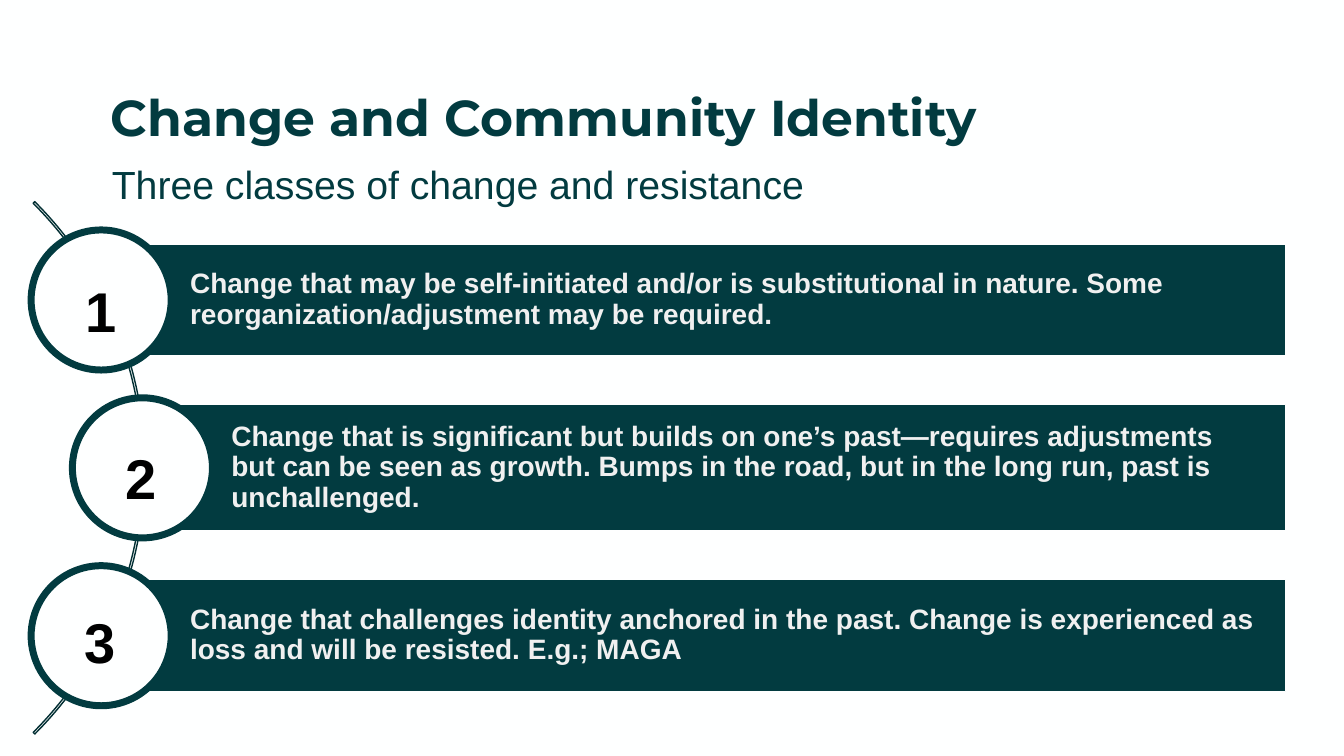
import pptx
import pptx.util
import pptx.dml.color
import pptx.enum.shapes
import pptx.enum.text

Cm = pptx.util.Cm
Pt = pptx.util.Pt
SHAPE = pptx.enum.shapes.MSO_SHAPE
ALIGN = pptx.enum.text.PP_ALIGN
ANCHOR = pptx.enum.text.MSO_ANCHOR

COLORS = {"paper": "FEFFFF", "teal": "023B40", "arc": "022F33",
          "bar_text": "F0F0F0", "number": "000000"}
TITLE = "Change and Community Identity"
SUBTITLE = "Three classes of change and resistance"
CLASSES = [
    {"number": "1", "center_x": 2.55, "bar_height": 2.82, "number_at": (1.78, 6.35),
     "text": "Change that may be self-initiated and/or is substitutional in nature. "
             "Some reorganization/adjustment may be required."},
    {"number": "2", "center_x": 3.59, "bar_height": 3.18, "number_at": (2.79, 10.57),
     "text": "Change that is significant but builds on one’s past—requires adjustments \v"
             "but can be seen as growth. Bumps in the road, but in the long run, "
             "past is unchallenged."},
    {"number": "3", "center_x": 2.55, "bar_height": 2.82, "number_at": (1.75, 14.71),
     "text": "Change that challenges identity anchored in the past. Change is experienced "
             "as loss and will be resisted. E.g.; MAGA"},
]
FIRST_CENTER_Y = 7.56
STEP_Y = 4.23
BAR_RIGHT = 32.4
CIRCLE_SIZE = 3.53
ARC_SIZE = 18.97
ARC_CENTER_X = -5.83


def rgb(name):
    """Return the named colour."""
    return pptx.dml.color.RGBColor.from_string(COLORS[name])


def write(frame, text, *, size, color, font="Arial", bold=True, align=ALIGN.LEFT,
          anchor=ANCHOR.TOP, insets=(0, 0, 0, 0), line_spacing=1.0):
    """Put formatted text in a frame."""
    frame.word_wrap = True
    frame.vertical_anchor = anchor
    (frame.margin_left, frame.margin_top,
     frame.margin_right, frame.margin_bottom) = [Cm(inset) for inset in insets]
    paragraph = frame.paragraphs[0]
    paragraph.text = text
    paragraph.alignment = align
    paragraph.line_spacing = line_spacing
    paragraph.font.size = Pt(size)
    paragraph.font.name = font
    paragraph.font.bold = bold
    paragraph.font.color.rgb = rgb(color)
    for run in paragraph.runs:
        run.font.size = Pt(size)
        run.font.name = font
        run.font.bold = bold
        run.font.color.rgb = rgb(color)


def add_text(slide, box, text, **text_format):
    """Add a text box."""
    frame = slide.shapes.add_textbox(*[Cm(length) for length in box]).text_frame
    write(frame, text, **text_format)


def add_outline(slide, preset, box, line, width, fill=None):
    """Add a preset shape with its line and optional fill."""
    shape = slide.shapes.add_shape(preset, *[Cm(length) for length in box])
    shape.shadow.inherit = False
    if fill:
        shape.fill.solid()
        shape.fill.fore_color.rgb = rgb(fill)
    else:
        shape.fill.background()
    shape.line.color.rgb = rgb(line)
    shape.line.width = Pt(width)
    return shape


def main():
    """Build the slide on the three classes of change."""
    presentation = pptx.Presentation()
    presentation.slide_width = Cm(33.87)
    presentation.slide_height = Cm(19.05)
    slide = presentation.slides.add_slide(presentation.slide_layouts[6])
    slide.background.fill.solid()
    slide.background.fill.fore_color.rgb = rgb("paper")

    add_text(slide, (2.82, 4.04, 28.27, 1.65), SUBTITLE, size=28, color="teal", bold=False)
    add_text(slide, (2.79, 1.63, 28.27, 3.48), TITLE, size=36, color="teal",
             font="Montserrat", insets=(0, 0.53, 0, 0))

    arc_center_y = FIRST_CENTER_Y + STEP_Y
    arc = add_outline(slide, SHAPE.BLOCK_ARC,
                      (ARC_CENTER_X - ARC_SIZE / 2, arc_center_y - ARC_SIZE / 2,
                       ARC_SIZE, ARC_SIZE), "arc", 1)
    for index, adjustment in enumerate((189, 27, 0.003)):
        arc.adjustments[index] = adjustment

    for index, change in enumerate(CLASSES):
        center_x = change["center_x"]
        center_y = FIRST_CENTER_Y + index * STEP_Y
        height = change["bar_height"]
        bar = add_outline(slide, SHAPE.RECTANGLE,
                          (center_x, center_y - height / 2, BAR_RIGHT - center_x, height),
                          "paper", 1, "teal")
        write(bar.text_frame, change["text"], size=20, color="bar_text",
              anchor=ANCHOR.MIDDLE, insets=(2.24, 0.15, 0.15, 0.15), line_spacing=0.9)
        add_outline(slide, SHAPE.OVAL,
                    (center_x - CIRCLE_SIZE / 2, center_y - CIRCLE_SIZE / 2,
                     CIRCLE_SIZE, CIRCLE_SIZE), "teal", 5, "paper")
        add_text(slide, (*change["number_at"], 2.13, 2.18), change["number"], size=40,
                 color="number", align=ALIGN.CENTER, insets=(0, 0.1, 0.61, 0.1),
                 line_spacing=1.3)

    presentation.save("out.pptx")


if __name__ == "__main__":
    main()
